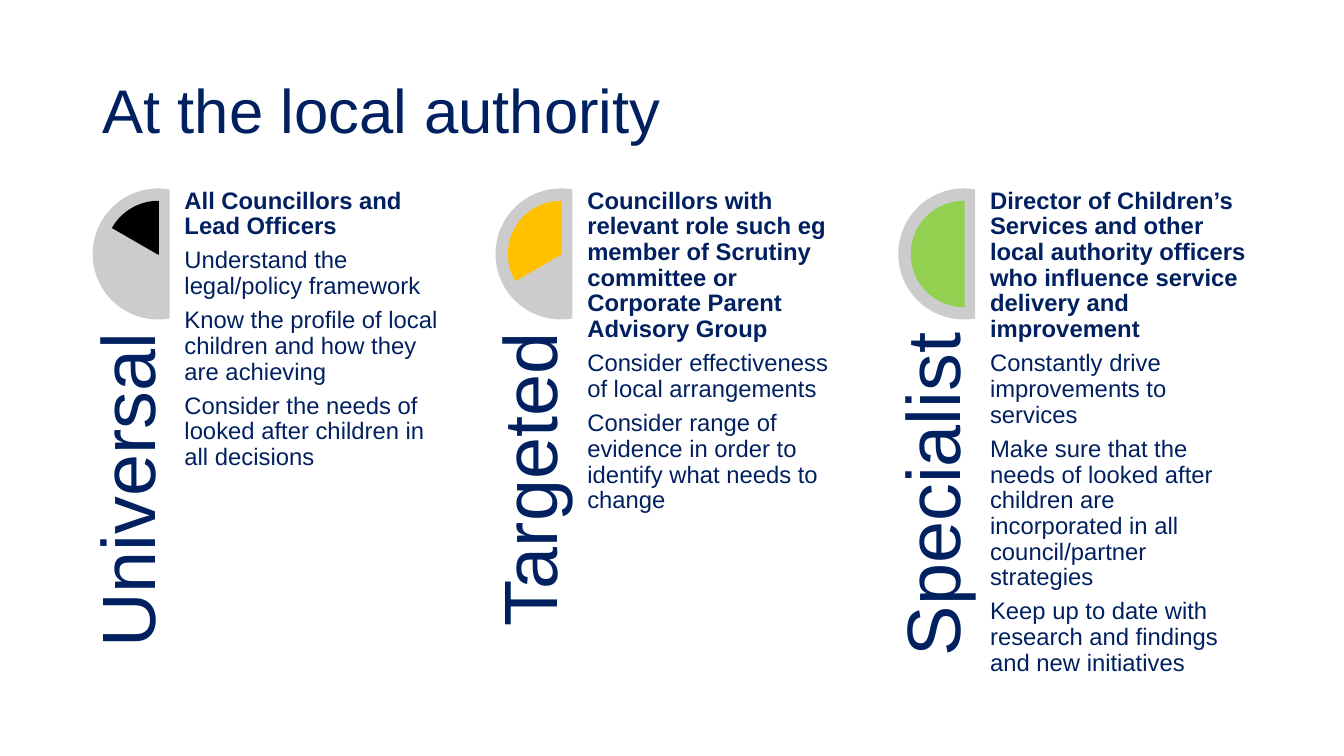
from dataclasses import dataclass

from pptx import Presentation
from pptx.dml.color import RGBColor
from pptx.enum import shapes, text
from pptx.util import Inches, Pt


@dataclass(frozen=True)
class Theme:
    font: str = "Arial"
    ink: str = "002060"
    disc: str = "CCCCCC"
    wedges: tuple = ("000000", "FFC000", "92D050")
    title: int = 44
    label: int = 54
    body: int = 17
    gap: int = 6


THEME = Theme()
LEVELS = [
    ("Universal", [
        "All Councillors and Lead Officers",
        "Understand the legal/policy framework",
        "Know the profile of local children and how they are achieving",
        "Consider the needs of looked after children in all decisions",
    ]),
    ("Targeted", [
        "Councillors with relevant role such eg member of Scrutiny committee"
        " or Corporate Parent Advisory Group",
        "Consider effectiveness of local arrangements",
        "Consider range of evidence in order to identify what needs to change",
    ]),
    ("Specialist", [
        "Director of Children’s Services and other local authority officers"
        " who influence service delivery and improvement",
        "Constantly drive improvements to services",
        "Make sure that the needs of looked after children are incorporated"
        " in all council/partner strategies",
        "Keep up to date with research and findings and new initiatives",
    ]),
]


def add_text(slide, box, lines, size, anchor=text.MSO_ANCHOR.TOP, inset=0):
    shape = slide.shapes.add_textbox(*map(Inches, box))
    frame = shape.text_frame
    frame.word_wrap = True
    frame.vertical_anchor = anchor
    frame.margin_left = frame.margin_right = Inches(inset)
    frame.margin_top = frame.margin_bottom = Inches(inset / 2)
    frame.text = "\n".join(lines)
    for para in frame.paragraphs:
        para.line_spacing = 0.9
        para.space_after = Pt(THEME.gap)
        para.font.name = THEME.font
        para.font.size = Pt(size)
        para.font.color.rgb = RGBColor.from_string(THEME.ink)
    return shape


def add_arc(slide, kind, box, start, end, color):
    """Draw a chord or pie between two angles in degrees."""
    shape = slide.shapes.add_shape(kind, *map(Inches, box))
    shape.shadow.inherit = False
    for i, angle in enumerate((start, end)):
        shape.adjustments[i] = angle * 0.6  # 60000 units a degree / 100000
    shape.fill.solid()
    shape.fill.fore_color.rgb = RGBColor.from_string(color)
    shape.line.fill.background()
    return shape


def add_title(slide, box, title):
    shape = add_text(slide, box, [title], THEME.title,
                     text.MSO_ANCHOR.MIDDLE, 0.1)
    shape.text_frame.paragraphs[0].space_after = Pt(0)


def add_level(slide, box, step, label, lines):
    left, top, width, height = box
    disc, rim = 1.3, 0.13
    add_arc(slide, shapes.MSO_SHAPE.CHORD, (left, top, disc, disc),
            80, 280, THEME.disc)
    pie = disc - 2 * rim
    color = THEME.wedges[step]
    wedge = add_arc(slide, shapes.MSO_SHAPE.PIE,
                    (left + rim, top + rim, pie, pie),
                    210 - 60 * step, 270, color)
    wedge.line.color.rgb = RGBColor.from_string(color)
    wedge.line.width = Pt(1)

    # The label is turned about its centre to fill the space below the disc.
    thick, drop = 0.78, 1.43
    length = height - drop
    shift = (length - thick) / 2
    name = add_text(slide, (left - shift, top + drop + shift, length, thick),
                    [label], THEME.label, text.MSO_ANCHOR.BOTTOM)
    name.rotation = 270
    name.text_frame.paragraphs[0].alignment = text.PP_ALIGN.RIGHT

    indent = 0.91
    body = add_text(slide, (left + indent, top, width - indent, height),
                    lines, THEME.body)
    body.text_frame.paragraphs[0].font.bold = True


def main():
    deck = Presentation()
    deck.slide_width, deck.slide_height = Inches(13.33), Inches(7.5)
    slide = deck.slides.add_slide(deck.slide_layouts[6])
    left, pitch = 0.92, 3.995
    add_title(slide, (left, 0.4, 11.5, 1.45), "At the local authority")
    for step, (label, lines) in enumerate(LEVELS):
        box = (left + step * pitch, 1.87, 3.51, 5.2)
        add_level(slide, box, step, label, lines)
    deck.save("out.pptx")


if __name__ == "__main__":
    main()
